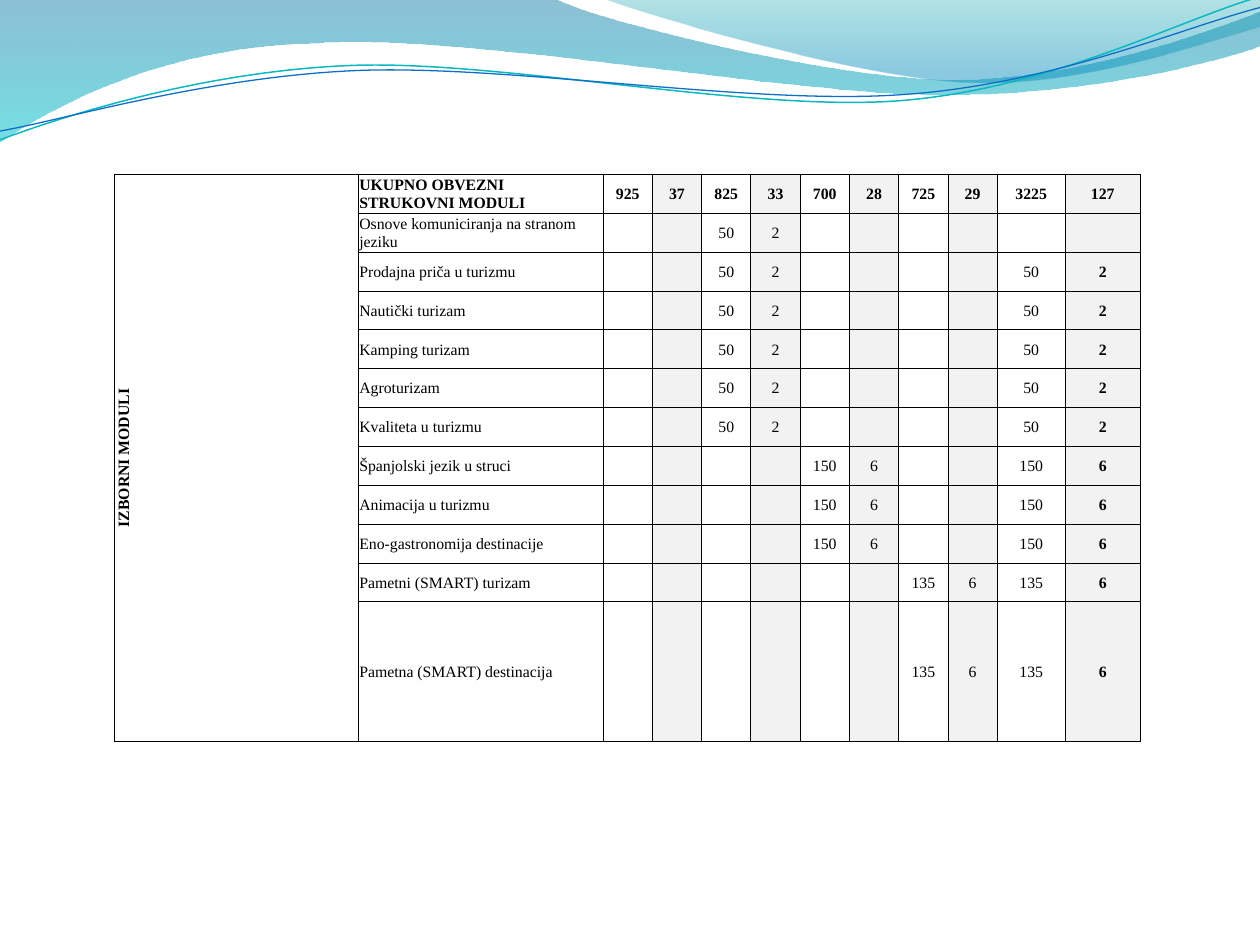
from math import cos, radians, sin

from lxml.etree import SubElement
from pptx import Presentation
from pptx.dml.color import RGBColor as Rgb
from pptx.enum.text import MSO_ANCHOR as Anchor, PP_ALIGN as Align
from pptx.oxml import parse_xml
from pptx.oxml.ns import nsdecls, qn
from pptx.util import Emu, Pt

COLORS = {
    "ink": "000000", "paper": "FFFFFF", "shade": "F2F2F2",
    "deep": "0074A1", "aqua": "00C6CF", "teal": "00A1A9", "sky": "008BBF",
    "teal line": "0AB8BF", "blue line": "0F6FC6",
}

# The slide is a grid of 1000 columns by 750 rows; all lengths count its cells.
COLUMNS, ROWS = 1000, 750
CELL = 9144

# Waves: steps of one point (start or line) or three points (curve)
BACK_WAVE = [
    [(0, 0)], [(440, -1)],
    [(476, 17), (664, 63), (758, 63)], [(853, 63), (958, 26), (1000, 9)],
    [(1001, 36)],
    [(983, 44), (870, 76), (746, 75)], [(622, 75), (382, 28), (257, 34)],
    [(129, 36), (46, 83), (-1, 113)],
]
FRONT_WAVE = [
    [(479, -1)],
    [(509, 11), (682, 62), (769, 65)], [(856, 69), (961, 32), (1000, 21)],
    [(1000, 0)],
]
TEAL_LINE = [
    [(0, 111)], [(48, 93), (158, 57), (277, 52)],
    [(395, 47), (593, 89), (713, 80)], [(833, 71), (938, 15), (998, -2)],
]
BLUE_LINE = [
    [(0, 104)], [(47, 96), (164, 61), (283, 56)],
    [(403, 51), (597, 84), (717, 75)], [(836, 67), (941, 21), (1000, 6)],
]
TILT = -2.7

# Table content: module, school year (0 to 3), hours, credits
GROUP = "IZBORNI MODULI"
TOTALS = ["UKUPNO OBVEZNI STRUKOVNI MODULI",
          925, 37, 825, 33, 700, 28, 725, 29, 3225, 127]
MODULES = [
    ("Osnove komuniciranja na stranom jeziku", 1, 50, 2),
    ("Prodajna priča u turizmu", 1, 50, 2),
    ("Nautički turizam", 1, 50, 2),
    ("Kamping turizam", 1, 50, 2),
    ("Agroturizam", 1, 50, 2),
    ("Kvaliteta u turizmu", 1, 50, 2),
    ("Španjolski jezik u struci", 2, 150, 6),
    ("Animacija u turizmu", 2, 150, 6),
    ("Eno-gastronomija destinacije", 2, 150, 6),
    ("Pametni (SMART) turizam", 3, 135, 6),
    ("Pametna (SMART) destinacija", 3, 135, 6),
]
COLUMN_WIDTHS = [193.8, 194.2] + [39.1] * 8 + [54, 59.6]
ROW_HEIGHT = 30.83


def cells(count):
    return Emu(round(count * CELL))


def turn(outline, center, degrees):
    """Turn an outline clockwise about a center."""
    (cx, cy), c, s = center, cos(radians(degrees)), sin(radians(degrees))
    return [[(cx + (x - cx) * c - (y - cy) * s, cy + (x - cx) * s + (y - cy) * c)
             for x, y in step] for step in outline]


def module_row(name, year, hours, credits, with_total):
    values = [""] * 10
    values[2 * year:2 * year + 2] = hours, credits
    if with_total:
        values[8:] = hours, credits
    return [name, *values]


class Deck:
    font, size, border = "Times New Roman", 9, 0.5

    def __init__(self):
        self.file = Presentation()
        self.file.slide_width, self.file.slide_height = cells(COLUMNS), cells(ROWS)
        self.slide = self.file.slides.add_slide(self.file.slide_layouts[6])

    def color(self, name):
        return Rgb.from_string(COLORS[name])

    def outline(self, outline, close):
        points = [(cells(x), cells(y)) for step in outline for x, y in step]
        builder = self.slide.shapes.build_freeform(*points[0], scale=1.0)
        builder.add_line_segments(points[1:], close=close)
        shape = builder.convert_to_shape()
        shape.shadow.inherit = False
        # Join each run of three points into one Bézier curve
        segments = list(shape.element.spPr.iter(qn("a:lnTo")))
        for step in outline[1:]:
            parts, segments = segments[:len(step)], segments[len(step):]
            if len(parts) == 3:
                parts[0].tag = qn("a:cubicBezTo")
                for part in parts[1:]:
                    parts[0].append(part[0])
                    part.getparent().remove(part)
        return shape

    def wave(self, outline, stops):
        shape = self.outline(outline, close=True)
        shape.line.fill.background()
        shape.fill.gradient()
        shape.fill.gradient_angle = 270
        for stop, (name, position, _) in zip(shape.fill.gradient_stops, stops):
            stop.color.rgb = self.color(name)
            stop.position = position
        tints = shape.element.spPr.iter(qn("a:srgbClr"))
        for tint, (_, _, opacity) in zip(tints, stops):
            SubElement(tint, qn("a:alpha"), val=str(opacity * 1000))

    def curve(self, outline, center, color, width):
        shape = self.outline(turn(outline, center, -TILT), close=False)
        shape.rotation = TILT
        shape.fill.background()
        shape.line.color.rgb = self.color(color)
        shape.line.width = Pt(width)

    def table(self, left, top, widths, row_height, rows):
        frame = self.slide.shapes.add_table(
            len(rows), len(widths), cells(left), cells(top),
            cells(sum(widths)), cells(row_height * len(rows)))
        table = frame.table
        table.first_row = table.horz_banding = False
        for column, width in zip(table.columns, widths):
            column.width = cells(width)
        for r, values in enumerate(rows):
            table.rows[r].height = cells(row_height)
            for c, value in enumerate(values):
                self.cell(table.cell(r, c), value,
                          bold=r == 0 or c == len(widths) - 1,
                          align=Align.LEFT if c == 1 else Align.CENTER,
                          fill="shade" if c > 2 and c % 2 else "paper")
        return table

    def cell(self, cell, value, bold, align, fill):
        cell.margin_left = cell.margin_right = cell.margin_top = cells(0.7)
        cell.margin_bottom = 0
        cell.vertical_anchor = Anchor.MIDDLE
        cell.fill.solid()
        cell.fill.fore_color.rgb = self.color(fill)
        paragraph = cell.text_frame.paragraphs[0]
        paragraph.text = str(value)
        paragraph.alignment = align
        for run in paragraph.runs:
            run.font.name, run.font.size, run.font.bold = self.font, Pt(self.size), bold
            run.font.color.rgb = self.color("ink")
        # Keep empty cells as low as filled ones
        SubElement(paragraph._p, qn("a:endParaRPr"), sz=str(self.size * 100))
        for i, side in enumerate("LRTB"):
            cell._tc.get_or_add_tcPr().insert(i, parse_xml(
                f'<a:ln{side} {nsdecls("a")} w="{Pt(self.border)}"><a:solidFill>'
                f'<a:srgbClr val="{COLORS["ink"]}"/></a:solidFill></a:ln{side}>'))


def main():
    deck = Deck()

    # Wave header
    deck.wave(BACK_WAVE, [("deep", 0, 45), ("aqua", 1, 55)])
    deck.wave(FRONT_WAVE, [("teal", 0, 30), ("sky", 0.8, 45)])
    deck.curve(TEAL_LINE, (499, 57.5), "teal line", 0.85)
    deck.curve(BLUE_LINE, (499.5, 59), "blue line", 0.75)

    # Module table; the first module carries no total
    rows = [[GROUP, *TOTALS]]
    for i, module in enumerate(MODULES):
        rows.append(["", *module_row(*module, with_total=i > 0)])
    modules = deck.table(90.7, 138.5, COLUMN_WIDTHS, ROW_HEIGHT, rows)

    # Group label turned upwards beside all rows
    group = modules.cell(0, 0)
    group.merge(modules.cell(len(rows) - 1, 0))
    group._tc.get_or_add_tcPr().set("vert", "vert270")

    deck.file.save("out.pptx")


if __name__ == "__main__":
    main()
